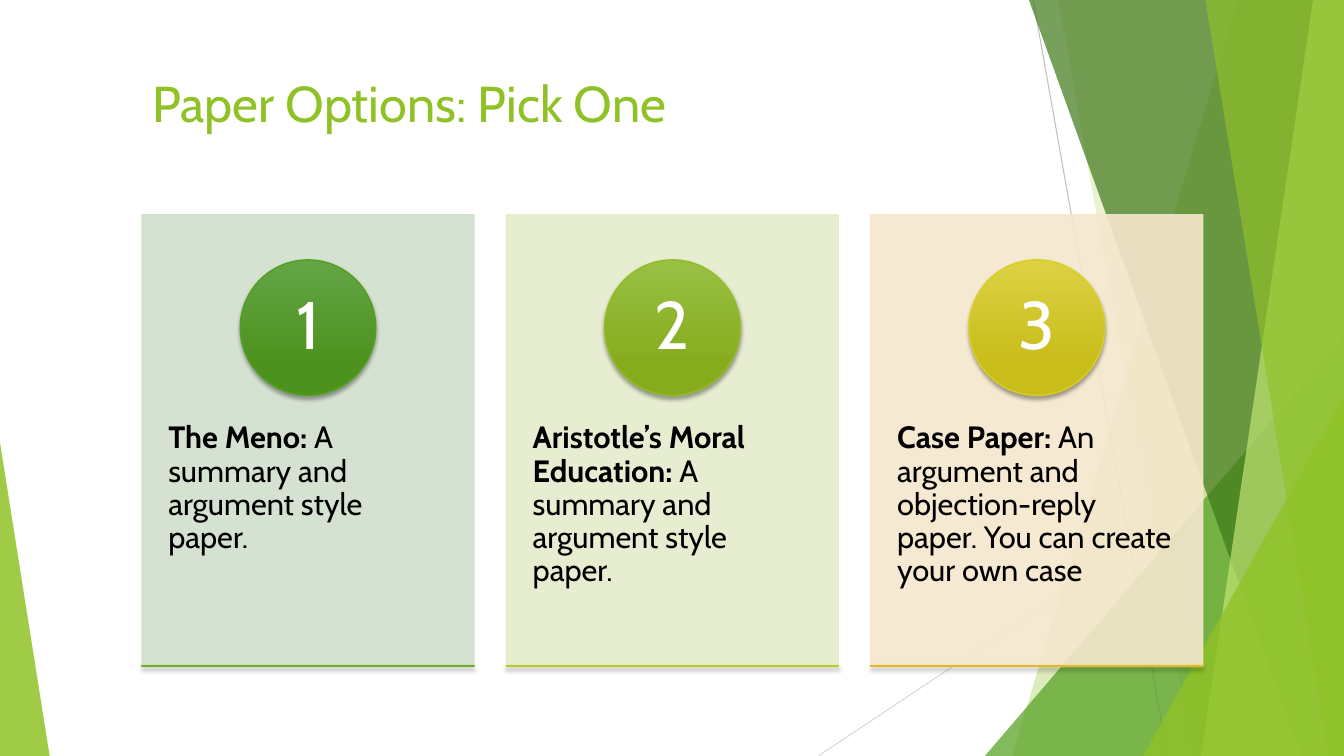
import pptx
import pptx.util
import pptx.dml.color
import pptx.enum.shapes
import pptx.enum.text
import pptx.oxml
import pptx.oxml.ns
from lxml import etree

Pt = pptx.util.Pt
SHAPES = pptx.enum.shapes.MSO_SHAPE
ALIGN = pptx.enum.text.PP_ALIGN
ANCHOR = pptx.enum.text.MSO_ANCHOR
qn = pptx.oxml.ns.qn
rgb = pptx.dml.color.RGBColor.from_string


def paint(shape, fill, line=None, opacity=100, shadow=False):
    shape.shadow.inherit = False
    if isinstance(fill, tuple):
        shape.fill.gradient()
        shape.fill.gradient_angle = 270
        for stop, color, position in zip(shape.fill.gradient_stops, fill, (0, 0.78)):
            stop.color.rgb = rgb(color)
            stop.position = position
    else:
        shape.fill.solid()
        shape.fill.fore_color.rgb = rgb(fill)
    if line:
        shape.line.color.rgb = rgb(line)
        shape.line.width = Pt(1)
    else:
        shape.line.fill.background()
    properties = shape._element.spPr
    if opacity < 100:
        for color in properties.iter(qn("a:srgbClr")):
            etree.SubElement(color, qn("a:alpha"), val=str(opacity * 1000))
    if shadow:
        effects = properties.find(qn("a:effectLst"))
        cast = etree.SubElement(effects, qn("a:outerShdw"), blurRad=str(Pt(3)),
                                dist=str(Pt(2)), dir="5400000", rotWithShape="0")
        color = etree.SubElement(cast, qn("a:srgbClr"), val="000000")
        etree.SubElement(color, qn("a:alpha"), val="35000")


def write(paragraph, text, size, color, bold=False):
    run = paragraph.add_run()
    run.text = text
    run.font.color.rgb = rgb(color)
    for name, value in {"name": "Cabin", "size": Pt(size), "bold": bold}.items():
        setattr(run.font, name, value)


WIDTH, HEIGHT = 960, 540
deck = pptx.Presentation()
deck.slide_width, deck.slide_height = Pt(WIDTH), Pt(HEIGHT)
slide = deck.slides.add_slide(deck.slide_layouts[5])
shapes = slide.shapes

title = shapes.title
title_place = {"left": Pt(101.5), "top": Pt(48), "width": Pt(803), "height": Pt(86.5)}
for name, value in title_place.items():
    setattr(title, name, value)
title.text_frame.vertical_anchor = ANCHOR.TOP
title.text_frame.word_wrap = True
heading = title.text_frame.paragraphs[0]
heading.alignment = ALIGN.LEFT
write(heading, "Paper Options: Pick One", 36, "90C226")

rays = [
    ((738, 0, 834, HEIGHT), "BFBFBF"),
    ((WIDTH, 290, 584.5, HEIGHT), "D9D9D9"),
]
for ends, color in rays:
    ray = shapes.add_connector(pptx.enum.shapes.MSO_CONNECTOR.STRAIGHT, *map(Pt, ends))
    ray.line.color.rgb = rgb(color)
    ray.line.width = Pt(0.75)
    etree.SubElement(ray._element.spPr, qn("a:effectLst"))

facets = [
    ("band", (884, 723), "90C226", 30),
    ("band", (756, 852), "90C226", 20),
    ("triangle", (703.5, 240, 256.5, 1), "54A021", 72),
    ("band", (735, 929.5), "3F7819", 70),
    ("band", (938, 858), "C0E474", 70),
    ("band", (861, 949), "90C226", 65),
    ("triangle", (816.5, 283, 143.5, 1), "90C226", 80),
    ("triangle", (0, 316, 35.5, 0), "90C226", 85),
]
for kind, place, color, opacity in facets:
    if kind == "band":
        top_x, bottom_x = place
        outline = shapes.build_freeform(Pt(top_x), 0)
        corners = [(WIDTH, 0), (WIDTH, HEIGHT), (bottom_x, HEIGHT)]
        outline.add_line_segments([(Pt(x), Pt(y)) for x, y in corners])
        facet = outline.convert_to_shape()
    else:
        left, top, width, apex = place
        facet = shapes.add_shape(SHAPES.ISOSCELES_TRIANGLE, Pt(left), Pt(top),
                                 Pt(width), Pt(HEIGHT - top))
        facet.adjustments[0] = apex
    paint(facet, color, opacity=opacity)

CARD_LEFT, CARD_TOP, CARD_WIDTH, CARD_HEIGHT = 101.5, 153.4, 237, 322.6
CARD_PITCH, BADGE = 260.3, 96.8
options = [
    ("The Meno:", " A summary and argument style paper.",
     "D1DFCD", ("63A545", "4D921E"), "54A021", ("7BB244", "679F1E"), "71AE20"),
    ("Aristotle’s Moral Education: ", "A summary and argument style paper.",
     "E5ECCB", ("99C044", "86AC1D"), "92BC1F", ("BDCE43", "A9BA1B"), "B9CB1E"),
    ("Case Paper: ", "An argument and objection-reply paper. You can create your own case",
     "F5E7CD", ("DCD143", "C8BD1A"), "DACF1C", ("E7BC43", "D2A91B"), "E6B91E"),
]
for index, option in enumerate(options):
    name, details, tint, badge_fill, badge_line, base_fill, base_line = option
    left = CARD_LEFT + index * CARD_PITCH

    card = shapes.add_shape(SHAPES.RECTANGLE, Pt(left), Pt(CARD_TOP),
                            Pt(CARD_WIDTH), Pt(CARD_HEIGHT))
    paint(card, tint, tint, 90)

    description = shapes.add_textbox(Pt(left), Pt(275.8), Pt(CARD_WIDTH), Pt(193.6)).text_frame
    frame_format = {"word_wrap": True, "margin_left": Pt(18.7), "margin_right": Pt(18.7),
                    "margin_top": Pt(25.9), "margin_bottom": Pt(25.9)}
    for key, value in frame_format.items():
        setattr(description, key, value)
    paragraph = description.paragraphs[0]
    paragraph.line_spacing = 0.9
    write(paragraph, name, 22, "000000", True)
    write(paragraph, details, 22, "000000")

    badge = shapes.add_shape(SHAPES.OVAL, Pt(left + (CARD_WIDTH - BADGE) / 2), Pt(185.6),
                             Pt(BADGE), Pt(BADGE))
    paint(badge, badge_fill, badge_line, shadow=True)
    badge.text_frame.vertical_anchor = ANCHOR.MIDDLE
    badge.text_frame.margin_top = badge.text_frame.margin_bottom = Pt(0.7)
    number = badge.text_frame.paragraphs[0]
    number.alignment = ALIGN.CENTER
    number.line_spacing = 0.9
    write(number, str(index + 1), 48, "FFFFFF")

    base = shapes.add_shape(SHAPES.RECTANGLE, Pt(left), Pt(CARD_TOP + CARD_HEIGHT - 0.5),
                            Pt(CARD_WIDTH), Pt(0.5))
    paint(base, base_fill, base_line, shadow=True)

deck.save("out.pptx")
